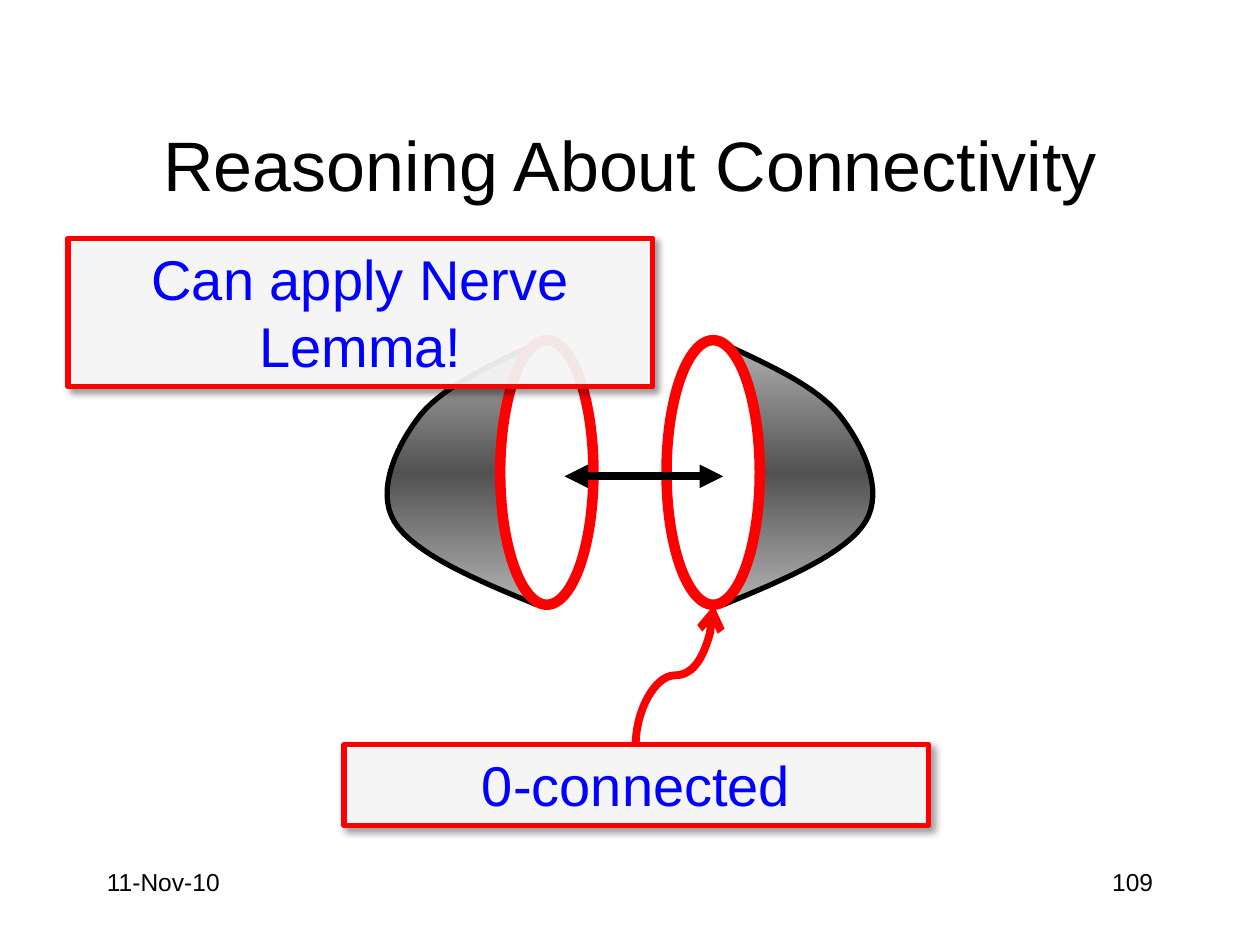
"""Build the slide on reasoning about connectivity."""
from dataclasses import dataclass

from pptx import Presentation
from pptx.dml.color import RGBColor
from pptx.enum.shapes import MSO_CONNECTOR as Connector, MSO_SHAPE as Shape
from pptx.enum.text import MSO_ANCHOR as Anchor, MSO_AUTO_SIZE as AutoSize, PP_ALIGN as Align
from pptx.oxml import parse_xml
from pptx.oxml.ns import nsdecls
from pptx.util import Inches, Pt

BLACK = RGBColor(0x00, 0x00, 0x00)
WHITE = RGBColor(0xFF, 0xFF, 0xFF)
RED = RGBColor(0xFF, 0x00, 0x00)
BLUE = RGBColor(0x00, 0x00, 0xFF)
LIGHT_GRAY = RGBColor(0xB2, 0xB2, 0xB2)
DARK_GRAY = RGBColor(0x52, 0x52, 0x52)

SLIDE_WIDTH = 10
CURVE_STEPS = 16
CONE_START = (5.68, 2.7)
CONE_CURVES = (
    ((6.07, 2.88), (6.46, 3.05), (6.66, 3.29)),
    ((6.85, 3.53), (7.02, 3.89), (6.87, 4.14)),
    ((6.72, 4.39), (6.23, 4.6), (5.74, 4.8)),
)


@dataclass(frozen=True)
class Area:
    left: float
    top: float
    width: float
    height: float

    def lengths(self) -> tuple:
        return tuple(Inches(v) for v in (self.left, self.top, self.width, self.height))


@dataclass(frozen=True)
class Callout:
    text: str
    area: Area


@dataclass(frozen=True)
class Footer:
    text: str
    left: float
    align: Align


RIM = Area(5.29, 2.7, 0.74, 2.1)
CONNECTED = Callout("0-connected", Area(2.73, 5.91, 4.64, 0.64))
NERVE = Callout("Can apply Nerve Lemma!", Area(0.54, 1.89, 4.64, 1.18))
FOOTERS = (Footer("11-Nov-10", 0.75, Align.LEFT), Footer("109", 7.17, Align.RIGHT))


def element(xml: str):
    tag, rest = xml.split(" ", 1)
    return parse_xml(f"{tag} {nsdecls('a')} {rest}")


def write(box, text: str, *, size: float, color: RGBColor, align: Align, anchor=Anchor.TOP) -> None:
    frame = box.text_frame
    frame.word_wrap = True
    frame.vertical_anchor = anchor
    para = frame.paragraphs[0]
    para.alignment = align
    span = para.add_run()
    span.text = text
    span.font.name = "Arial"
    span.font.size = Pt(size)
    span.font.color.rgb = color


def outline(shape, color: RGBColor, width: float) -> None:
    shape.line.color.rgb = color
    shape.line.width = Pt(width)


def cone_points() -> list:
    points, start = [CONE_START], CONE_START
    for first, second, end in CONE_CURVES:
        for step in range(1, CURVE_STEPS + 1):
            t = step / CURVE_STEPS
            weights = ((1 - t) ** 3, 3 * t * (1 - t) ** 2, 3 * t * t * (1 - t), t ** 3)
            corners = (start, first, second, end)
            points.append(tuple(sum(w * c[axis] for w, c in zip(weights, corners)) for axis in (0, 1)))
        start = end
    return points


def draw_cone(page, mirrored: bool) -> None:
    points = [(Inches(SLIDE_WIDTH - x if mirrored else x), Inches(y)) for x, y in cone_points()]
    builder = page.shapes.build_freeform(*points[0])
    builder.add_line_segments(points[1:], close=False)
    cone = builder.convert_to_shape()
    cone.shadow.inherit = False
    outline(cone, BLACK, 3)
    cone.fill.solid()
    stops = "".join(
        f'<a:gs pos="{position * 1000}"><a:srgbClr val="{color}"/></a:gs>'
        for position, color in ((0, LIGHT_GRAY), (50, DARK_GRAY), (100, LIGHT_GRAY))
    )
    gradient = element(f'<a:gradFill rotWithShape="1"><a:gsLst>{stops}</a:gsLst><a:lin ang="5400000" scaled="1"/></a:gradFill>')
    properties = cone._element.spPr
    properties.replace(properties.find("{*}solidFill"), gradient)


def draw_rim(page, mirrored: bool) -> None:
    left = SLIDE_WIDTH - RIM.left - RIM.width if mirrored else RIM.left
    rim = page.shapes.add_shape(Shape.OVAL, *Area(left, RIM.top, RIM.width, RIM.height).lengths())
    rim.shadow.inherit = False
    rim.fill.solid()
    rim.fill.fore_color.rgb = WHITE
    outline(rim, RED, 6)


def draw_callout(page, callout: Callout) -> None:
    box = page.shapes.add_shape(Shape.RECTANGLE, *callout.area.lengths())
    box.fill.solid()
    box.fill.fore_color.rgb = WHITE
    outline(box, RED, 3)
    box.shadow.inherit = False
    properties = box._element.spPr
    properties.find("{*}solidFill")[0].append(element('<a:alpha val="90000"/>'))
    properties.find("{*}effectLst").append(element(
        f'<a:outerShdw blurRad="{Pt(4)}" dist="{Pt(3)}" dir="2700000" algn="tl" rotWithShape="0">'
        f'<a:srgbClr val="{BLACK}"><a:alpha val="40000"/></a:srgbClr></a:outerShdw>'))
    write(box, callout.text, size=32, color=BLUE, align=Align.CENTER)
    box.text_frame.auto_size = AutoSize.SHAPE_TO_FIT_TEXT


def draw_arrow(page, kind: Connector, start: tuple, end: tuple, color: RGBColor, **heads: str):
    arrow = page.shapes.add_connector(kind, *(Inches(v) for v in (*start, *end)))
    outline(arrow, color, 4.5)
    for end_name, head in heads.items():
        arrow.line._get_or_add_ln().append(element(f'<a:{end_name} type="{head}"/>'))
    arrow._element.spPr.append(element("<a:effectLst />"))
    return arrow


def main() -> None:
    deck = Presentation()
    deck.slide_width, deck.slide_height = Inches(SLIDE_WIDTH), Inches(7.5)
    page = deck.slides.add_slide(deck.slide_layouts[5])
    title = page.shapes.title
    title.left, title.top, title.width, title.height = Area(0.75, 0.67, 8.5, 1.25).lengths()
    write(title, "Reasoning About Connectivity", size=40, color=BLACK, align=Align.CENTER, anchor=Anchor.MIDDLE)
    for footer in FOOTERS:
        box = page.shapes.add_textbox(*Area(footer.left, 6.83, 2.08, 0.5).lengths())
        write(box, footer.text, size=14, color=BLACK, align=footer.align)
    for draw in (draw_cone, draw_rim):
        for mirrored in (False, True):
            draw(page, mirrored)
    draw_arrow(page, Connector.STRAIGHT, (4.48, 3.78), (5.74, 3.78), BLACK, headEnd="triangle", tailEnd="triangle")
    draw_callout(page, CONNECTED)
    pointer = draw_arrow(page, Connector.CURVE, (5.91, 5.67), (4.8, 5.05), RED, tailEnd="arrow")
    pointer._element.spPr.find("{*}xfrm").set("rot", "5400000")
    draw_callout(page, NERVE)
    deck.save("out.pptx")


if __name__ == "__main__":
    main()
